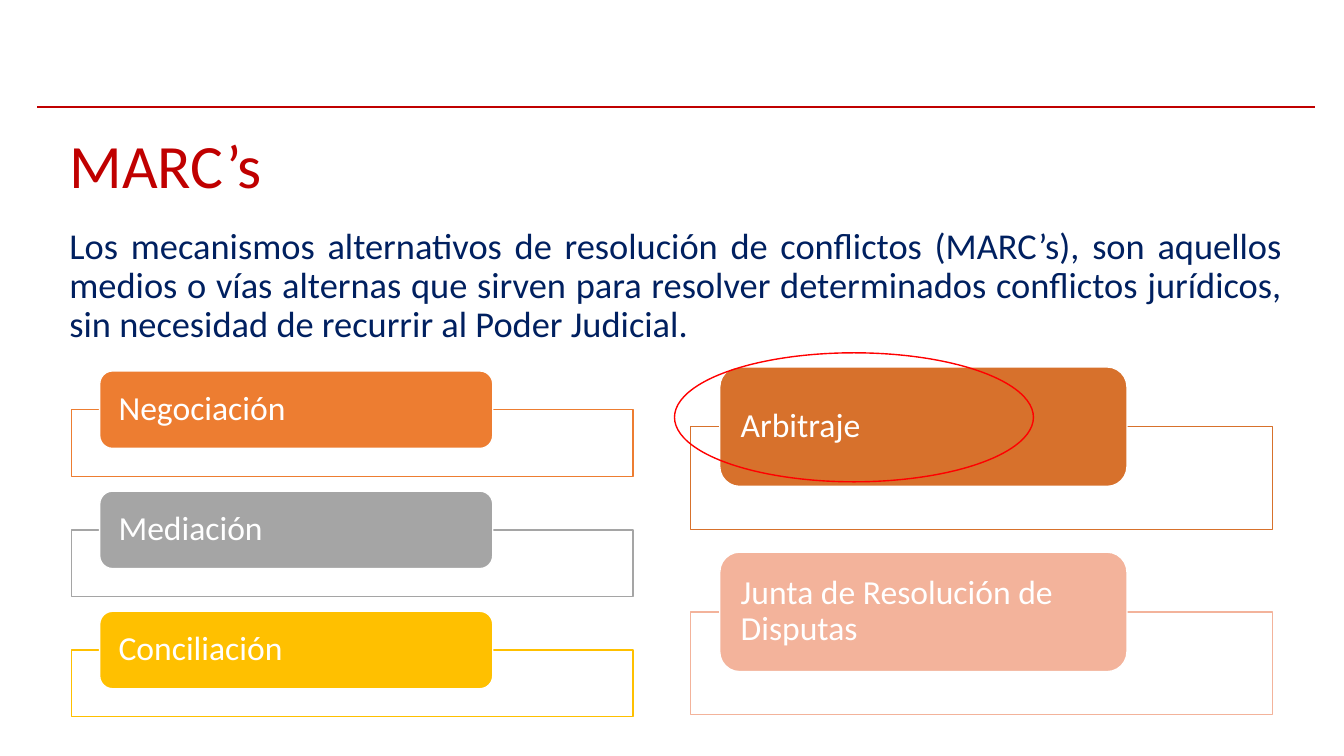
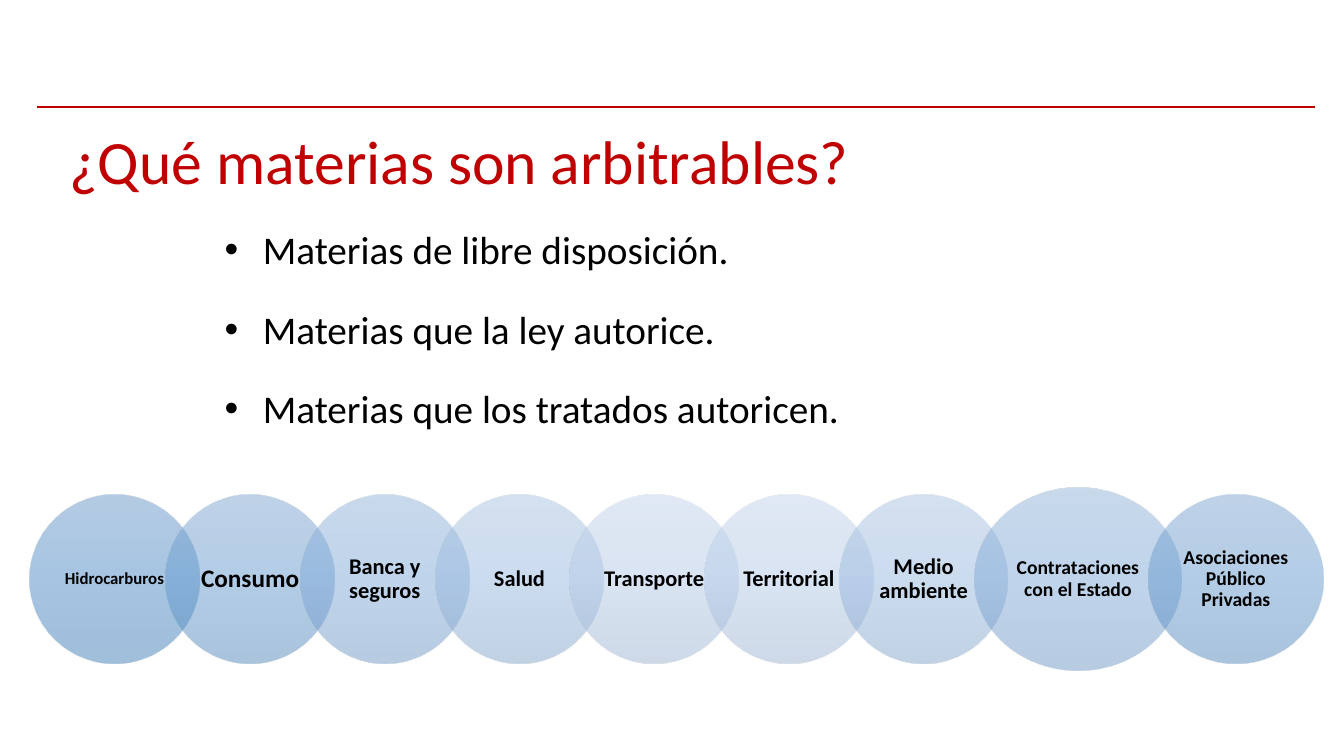
from lxml import etree
from pptx import Presentation
from pptx import util as u
from pptx.dml.color import RGBColor
from pptx.enum import shapes, text
from pptx.oxml.ns import qn

PX = 9144
FONT = "Calibri"
RED, NAVY, BLACK, WHITE = "C00000", "002060", "000000", "FFFFFF"
MARK = "FF0000"
TONES = [
    ("6B99C9", "4D8DC7", "3E7EB7"),
    ("7EA7D1", "679CD0", "568ABE"),
    ("94B5DA", "81ABD9", "6E98C5"),
    ("ABC4E3", "9BBBE1", "86A6CC"),
    ("C2D4EB", "B6CCE9", "9EB5D3"),
]


def px(n):
    return u.Emu(round(n * PX))


def rgb(value):
    return RGBColor.from_string(value)


def add_run(p, words, size, color, bold=False):
    r = p.add_run()
    r.text = words
    r.font.name, r.font.size, r.font.bold = FONT, u.Pt(size), bold
    r.font.color.rgb = rgb(color)


def set_frame(tf, inset_x, inset_y, anchor):
    tf.word_wrap = True
    tf.margin_left = tf.margin_right = px(inset_x)
    tf.margin_top = tf.margin_bottom = px(inset_y)
    tf.vertical_anchor = anchor


def add_text(s, box, words, size, color, anchor=text.MSO_ANCHOR.TOP, align=text.PP_ALIGN.LEFT):
    tf = s.shapes.add_textbox(*map(px, box)).text_frame
    set_frame(tf, 10, 5, anchor)
    p = tf.paragraphs[0]
    p.alignment, p.line_spacing = align, 0.9
    add_run(p, words, size, color)


def add_shape(s, kind, box, fill=None, line=None):
    sp = s.shapes.add_shape(kind, *map(px, box))
    sp.shadow.inherit = False
    if fill:
        sp.fill.solid()
        sp.fill.fore_color.rgb = rgb(fill)
    else:
        sp.fill.background()
    if line:
        sp.line.color.rgb, sp.line.width = rgb(line), u.Pt(1)
    else:
        sp.line.fill.background()
    return sp


def label(sp, words, size, color, insets, align, bold=False):
    tf = sp.text_frame
    set_frame(tf, *insets, text.MSO_ANCHOR.MIDDLE)
    p = tf.paragraphs[0]
    p.alignment, p.line_spacing = align, 0.9
    add_run(p, words, size, color, bold)


def fade(sp, tone):
    sp.fill.gradient()
    sp.fill.gradient_angle = 270
    stops = sp._element.spPr.find(qn("a:gradFill")).find(qn("a:gsLst"))
    for old in list(stops):
        stops.remove(old)
    for pos, color in zip((0, 50000, 100000), tone):
        gs = etree.SubElement(stops, qn("a:gs"), pos=str(pos))
        clr = etree.SubElement(gs, qn("a:srgbClr"), val=color)
        etree.SubElement(clr, qn("a:alpha"), val="50000")


def new_slide(prs, title, title_h):
    s = prs.slides.add_slide(prs.slide_layouts[6])
    add_text(s, (59, 120, 1150, title_h), title, 44, RED, text.MSO_ANCHOR.MIDDLE)
    rule = s.shapes.add_connector(shapes.MSO_CONNECTOR.STRAIGHT, px(37), px(106), px(1304), px(106))
    rule.line.color.rgb, rule.line.width = rgb(RED), u.Pt(1.5)
    etree.SubElement(rule._element.spPr, qn("a:effectLst"))
    return s


def tab_list(s, box, items):
    x, y, w, h = box
    step, frame_h = 1.55, 0.86
    tab_h = h / (step * (len(items) - 1) + 0.5 + frame_h)
    for i, (words, color) in enumerate(items):
        top = y + i * step * tab_h
        add_shape(s, shapes.MSO_SHAPE.RECTANGLE,
                  (x, top + tab_h / 2, w, frame_h * tab_h), WHITE, color)
        tab = add_shape(s, shapes.MSO_SHAPE.ROUNDED_RECTANGLE,
                        (x + 0.05 * w, top, 0.7 * w, tab_h), color, WHITE)
        label(tab, words, 24, WHITE, (15, 0), text.PP_ALIGN.LEFT)


def bullet_list(s, box, items):
    tf = s.shapes.add_textbox(*map(px, box)).text_frame
    set_frame(tf, 10, 5, text.MSO_ANCHOR.TOP)
    for i, words in enumerate(items):
        p = tf.add_paragraph() if i else tf.paragraphs[0]
        p.space_before = u.Pt(23 if i else 0)
        pPr = p._p.get_or_add_pPr()
        pPr.set("marL", str(px(38)))
        pPr.set("indent", str(px(-38)))
        etree.SubElement(pPr, qn("a:buFont"), typeface="Arial")
        etree.SubElement(pPr, qn("a:buChar"), char="•")
        add_run(p, words, 28, BLACK)


def circle_chain(s, box, items):
    x, y, h = box
    for words, size, w, extra, tone in items:
        sp = add_shape(s, shapes.MSO_SHAPE.OVAL, (x, y - extra / 2, w, h + extra))
        fade(sp, TONES[tone])
        label(sp, words, size, BLACK, (9, 2), text.PP_ALIGN.CENTER, True)
        x += w - 0.2 * h


def marcs_slide(prs):
    s = new_slide(prs, "MARC’s", 94)
    add_text(s, (59, 221, 1224, 440),
             "Los mecanismos alternativos de resolución de conflictos (MARC’s), son aquellos "
             "medios o vías alternas que sirven para resolver determinados conflictos jurídicos, "
             "sin necesidad de recurrir al Poder Judicial.",
             26, NAVY, align=text.PP_ALIGN.JUSTIFY)
    tab_list(s, (71, 368, 557, 343), [
        ("Negociación", "ED7D31"), ("Mediación", "A5A5A5"), ("Conciliación", "FFC000")])
    tab_list(s, (685, 364, 577, 345), [
        ("Arbitraje", "D7712C"), ("Junta de Resolución de Disputas", "F3B39B")])
    add_shape(s, shapes.MSO_SHAPE.OVAL, (669, 350, 356, 128), line=MARK)


def subjects_slide(prs):
    s = new_slide(prs, "¿Qué materias son arbitrables?", 86)
    bullet_list(s, (213, 219, 907, 219), [
        "Materias de libre disposición.",
        "Materias que la ley autorice.",
        "Materias que los tratados autoricen."])
    circle_chain(s, (29, 491, 167), [
        ("Hidrocarburos", 12, 169, 0, 0),
        ("Consumo", 18, 167, 0, 1),
        ("Banca y seguros", 16, 167, 0, 2),
        ("Salud", 16, 167, 0, 3),
        ("Transporte", 16, 167, 0, 4),
        ("Territorial", 16, 167, 0, 4),
        ("Medio ambiente", 16, 167, 0, 3),
        ("Contrataciones con el Estado", 14, 206, 15, 2),
        ("Asociaciones Público Privadas", 14, 174, 0, 1)])


def main():
    prs = Presentation()
    prs.slide_width, prs.slide_height = px(1333), px(750)
    marcs_slide(prs)
    subjects_slide(prs)
    prs.save("out.pptx")


if __name__ == "__main__":
    main()
